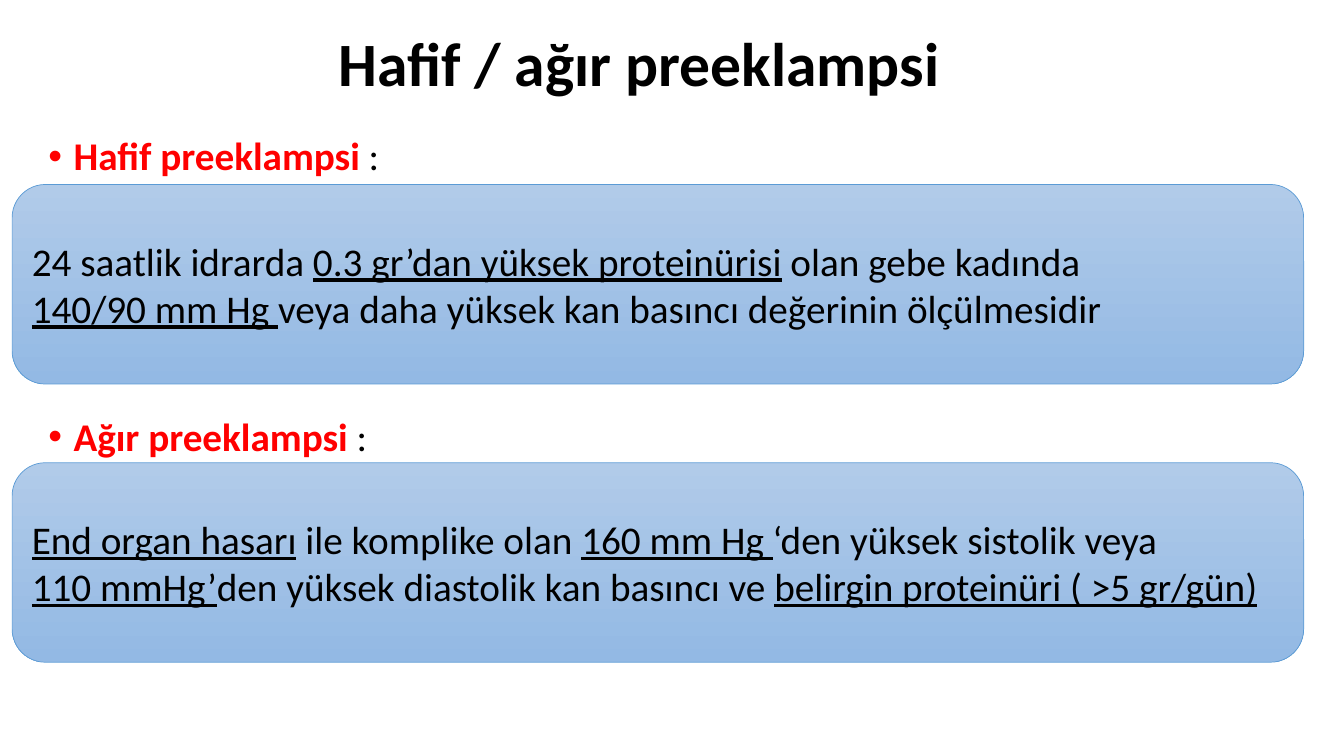
import pptx
import pptx.dml.color
import pptx.enum.shapes
import pptx.enum.text
import pptx.util
from pptx.util import Inches

COLORS = {
    "ink": "000000",
    "heading": "FF0000",
    "panel_top": "B1CBE9",
    "panel_bottom": "93B9E4",
    "panel_edge": "5B9BD5",
}


class SlideBuilder:
    """Holds the slide and its text style, and adds each kind of element."""

    font_name = "Calibri"
    text_size = 28
    title_size = 44

    def __init__(self, slide):
        self.slide = slide

    def color(self, name):
        return pptx.dml.color.RGBColor.from_string(COLORS[name])

    def place(self, shape, left, top, width, height):
        shape.left, shape.top = Inches(left), Inches(top)
        shape.width, shape.height = Inches(width), Inches(height)

    def add_run(self, paragraph, text, size=text_size, color="ink", bold=False, underline=False):
        run = paragraph.add_run()
        run.text = text
        run.font.name = self.font_name
        run.font.size = pptx.util.Pt(size)
        run.font.bold = bold
        run.font.underline = underline
        run.font.color.rgb = self.color(color)

    def paragraphs(self, frame, count):
        for _ in range(count - 1):
            frame.add_paragraph()
        return frame.paragraphs

    def title(self, text, *box):
        heading = self.slide.shapes.title
        self.place(heading, *box)
        frame = heading.text_frame
        frame.auto_size = pptx.enum.text.MSO_AUTO_SIZE.NONE
        frame.vertical_anchor = pptx.enum.text.MSO_ANCHOR.MIDDLE
        paragraph = frame.paragraphs[0]
        paragraph.alignment = pptx.enum.text.PP_ALIGN.CENTER
        paragraph.line_spacing = 0.9
        self.add_run(paragraph, text, size=self.title_size, bold=True)

    def headings(self, texts, gap, *box):
        body = self.slide.placeholders[1]
        self.place(body, *box)
        frame = body.text_frame
        frame.auto_size = pptx.enum.text.MSO_AUTO_SIZE.NONE
        for index, paragraph in enumerate(self.paragraphs(frame, len(texts))):
            paragraph.line_spacing = 0.9
            paragraph.space_before = pptx.util.Pt(gap if index else 0)
            properties = paragraph._p.get_or_add_pPr()
            properties.set("marL", str(Inches(0.25)))
            properties.set("indent", str(Inches(-0.25)))
            self.add_run(paragraph, texts[index], color="heading", bold=True)
            self.add_run(paragraph, " :")

    def panel(self, lines, *box):
        panel = self.slide.shapes.add_shape(
            pptx.enum.shapes.MSO_SHAPE.ROUNDED_RECTANGLE, *map(Inches, box))
        panel.shadow.inherit = False
        panel.fill.gradient()
        panel.fill.gradient_angle = 270
        for stop, name in zip(panel.fill.gradient_stops, ("panel_top", "panel_bottom")):
            stop.color.rgb = self.color(name)
            stop.position = 0 if name == "panel_top" else 1
        panel.line.color.rgb = self.color("panel_edge")
        panel.line.width = pptx.util.Pt(0.5)
        frame = panel.text_frame
        frame.word_wrap = True
        frame.vertical_anchor = pptx.enum.text.MSO_ANCHOR.MIDDLE
        for paragraph, line in zip(self.paragraphs(frame, len(lines)), lines):
            paragraph.alignment = pptx.enum.text.PP_ALIGN.LEFT
            for text, underline in line:
                self.add_run(paragraph, text, underline=underline)


def main():
    presentation = pptx.Presentation()
    presentation.slide_width = Inches(13.33)
    presentation.slide_height = Inches(7.5)
    builder = SlideBuilder(presentation.slides.add_slide(presentation.slide_layouts[1]))

    mild_definition = [
        [("24 saatlik idrarda ", False), ("0.3 gr’dan yüksek proteinürisi", True),
         (" olan gebe kadında", False)],
        [("140/90 mm Hg ", True),
         ("veya daha yüksek kan basıncı değerinin ölçülmesidir", False)],
    ]
    severe_definition = [
        [("End organ hasarı", True), (" ile komplike olan ", False),
         ("160 mm Hg ", True), ("‘den yüksek sistolik veya", False)],
        [("110 mmHg’", True), ("den yüksek diastolik kan basıncı ve ", False),
         ("belirgin proteinüri ( >5 gr/gün)", True)],
    ]

    builder.title("Hafif / ağır preeklampsi ", 0.66, 0.12, 11.5, 1.09)
    builder.headings(["Hafif preeklampsi", "Ağır preeklampsi"], 170, 0.38, 1.31, 12.95, 5.71)
    for top, definition in ((1.83, mild_definition), (4.59, severe_definition)):
        builder.panel(definition, 0.12, top, 12.81, 1.98)

    presentation.save("out.pptx")


if __name__ == "__main__":
    main()
